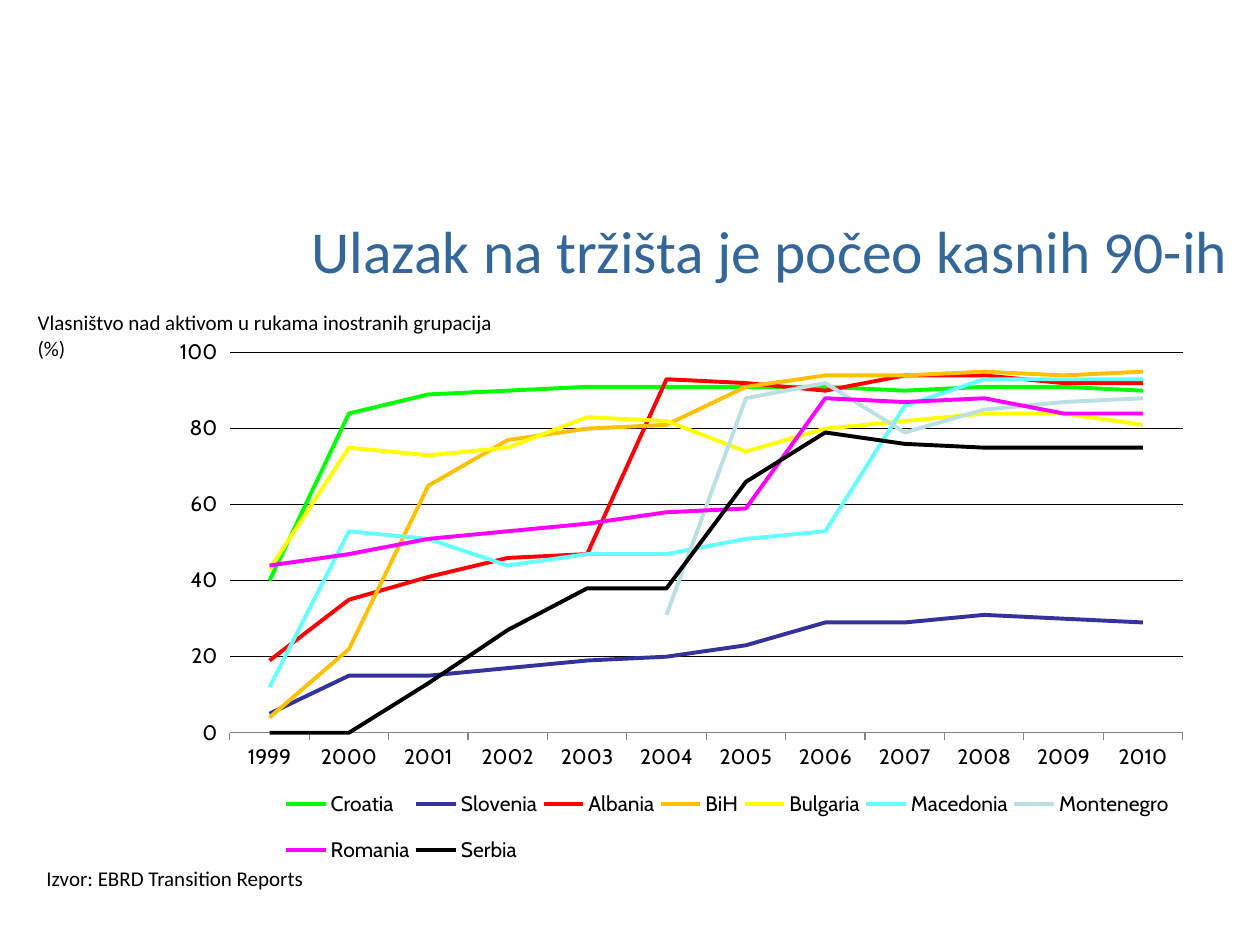
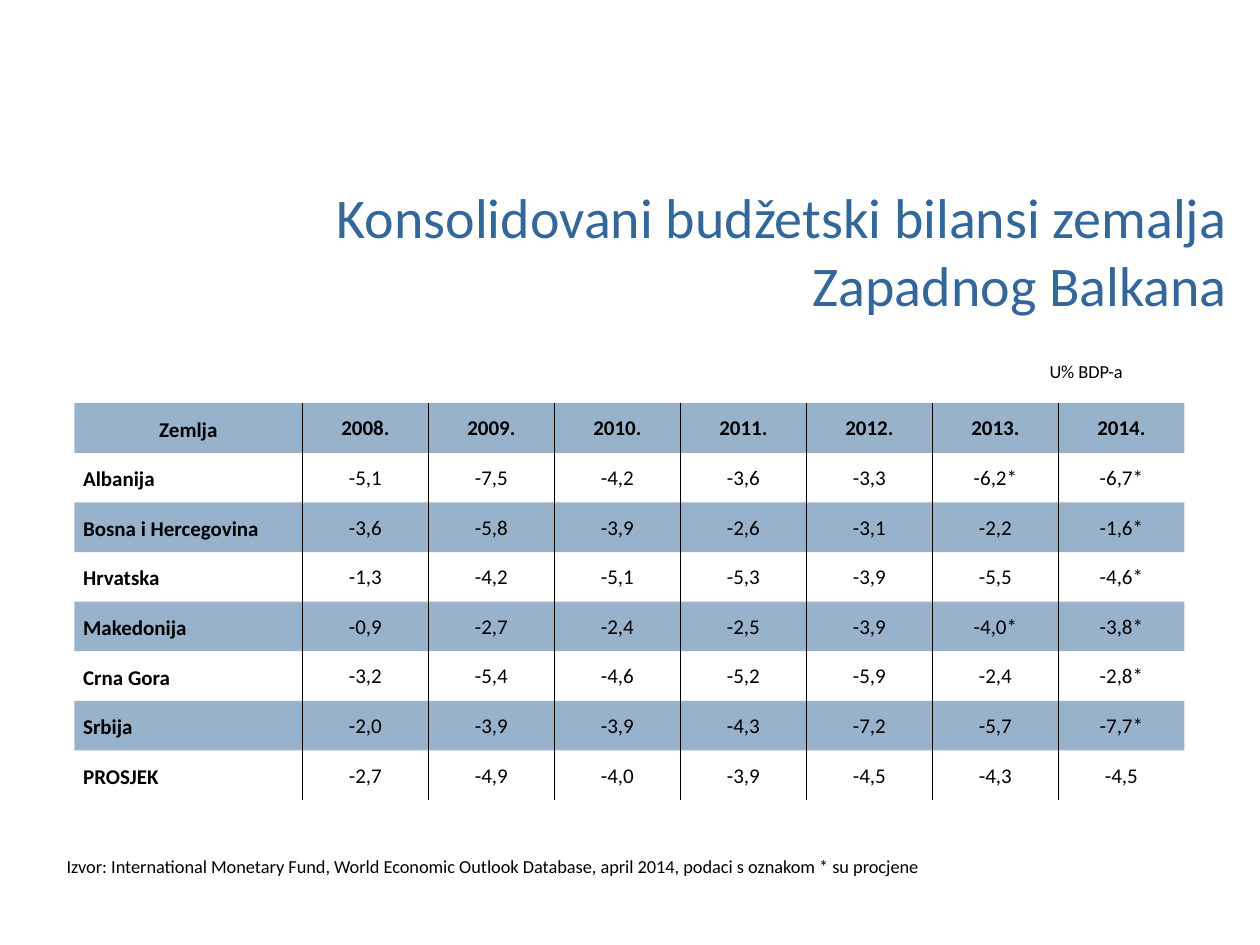
import pptx
import pptx.util
import pptx.chart.data
import pptx.dml.color
import pptx.enum.chart
import pptx.enum.text
import pptx.oxml
import pptx.oxml.ns

FONT, BLUE, BLACK = "Calibri", "336699", "000000"
INCH, PT = pptx.util.Inches, pptx.util.Pt
ALIGN = pptx.enum.text.PP_ALIGN
MIDDLE = pptx.enum.text.MSO_ANCHOR.MIDDLE
QN = pptx.oxml.ns.qn

YEARS = [str(year) for year in range(1999, 2011)]
LINES = [
    ("Croatia", "00FF00", [40, 84, 89, 90, 91, 91, 91, 91, 90, 91, 91, 90]),
    ("Slovenia", "333399", [5, 15, 15, 17, 19, 20, 23, 29, 29, 31, 30, 29]),
    ("Albania", "FF0000", [19, 35, 41, 46, 47, 93, 92, 90, 94, 94, 92, 92]),
    ("BiH", "FFC000", [4, 22, 65, 77, 80, 81, 91, 94, 94, 95, 94, 95]),
    ("Bulgaria", "FFFF00", [43, 75, 73, 75, 83, 82, 74, 80, 82, 84, 84, 81]),
    ("Macedonia", "66FFFF", [12, 53, 51, 44, 47, 47, 51, 53, 86, 93, 93, 93]),
    ("Montenegro", "BBE0E3", [None] * 5 + [31, 88, 92, 79, 85, 87, 88]),
    ("Romania", "FF00FF", [44, 47, 51, 53, 55, 58, 59, 88, 87, 88, 84, 84]),
    ("Serbia", "000000", [0, 0, 13, 27, 38, 38, 66, 79, 76, 75, 75, 75]),
]
ROWS = [
    ("Zemlja", "2008.", "2009.", "2010.", "2011.", "2012.", "2013.", "2014."),
    ("Albanija", "-5,1", "-7,5", "-4,2", "-3,6", "-3,3", "-6,2*", "-6,7*"),
    ("Bosna i Hercegovina", "-3,6", "-5,8", "-3,9", "-2,6", "-3,1", "-2,2", "-1,6*"),
    ("Hrvatska", "-1,3", "-4,2", "-5,1", "-5,3", "-3,9", "-5,5", "-4,6*"),
    ("Makedonija", "-0,9", "-2,7", "-2,4", "-2,5", "-3,9", "-4,0*", "-3,8*"),
    ("Crna Gora", "-3,2", "-5,4", "-4,6", "-5,2", "-5,9", "-2,4", "-2,8*"),
    ("Srbija", "-2,0", "-3,9", "-3,9", "-4,3", "-7,2", "-5,7", "-7,7*"),
    ("PROSJEK", "-2,7", "-4,9", "-4,0", "-3,9", "-4,5", "-4,3", "-4,5"),
]
CHART_BOX = (0.2, 2.57, 9.61, 4.49)
TABLE_BOX = (0.59, 3.2, 8.82, 3.15)
TITLE_BOX = (0.84, 1.63, 9, 0.71)
NO_STYLE = "{2D5ABB26-0587-4C30-8999-92F81FD0307C}"


def color(code):
    return pptx.dml.color.RGBColor.from_string(code)


def inches(box):
    return [INCH(side) for side in box]


def add_run(para, text, size, tint=BLACK, bold=False):
    run = para.add_run()
    run.text = text
    run.font.name, run.font.size, run.font.bold = FONT, PT(size), bold
    run.font.color.rgb = color(tint)


def add_text(slide, box, lines, size, tint=BLACK, align=ALIGN.LEFT, anchor=None):
    frame = slide.shapes.add_textbox(*inches(box)).text_frame
    frame.word_wrap = True
    if anchor is not None:
        frame.vertical_anchor = anchor
    for num, line in enumerate(lines):
        para = frame.add_paragraph() if num else frame.paragraphs[0]
        para.alignment = align
        add_run(para, line, size, tint)


def add_title(slide, text, size):
    add_text(slide, TITLE_BOX, [text], size, BLUE, ALIGN.RIGHT, MIDDLE)


def place(part, box, inner=False):
    for old in part.findall(QN("c:layout")):
        part.remove(old)
    target = '<c:layoutTarget val="inner"/>' if inner else ""
    modes = "".join(f'<c:{key}Mode val="edge"/>' for key in "xy")
    sides = "".join(f'<c:{key} val="{val}"/>' for key, val in zip("xywh", box))
    layout = pptx.oxml.parse_xml(
        f'<c:layout {pptx.oxml.ns.nsdecls("c")}><c:manualLayout>'
        f"{target}{modes}{sides}</c:manualLayout></c:layout>")
    part.insert(0 if inner else 1, layout)


def add_lines(slide):
    data = pptx.chart.data.CategoryChartData()
    data.categories = YEARS
    for name, _, vals in LINES:
        data.add_series(name, vals)
    kind = pptx.enum.chart.XL_CHART_TYPE.LINE
    chart = slide.shapes.add_chart(kind, *inches(CHART_BOX), data).chart
    chart.has_title = False
    chart.font.name, chart.font.size = "Cabin", PT(12)
    chart.font.color.rgb = color(BLACK)

    plot = chart.plots[0]
    plot.vary_by_categories = False
    for series, (_, tint, _) in zip(plot.series, LINES):
        series.smooth = False
        series.format.line.width = PT(2.25)
        series.format.line.color.rgb = color(tint)

    axis = chart.value_axis
    axis.minimum_scale, axis.maximum_scale, axis.major_unit = 0, 100, 20
    axis.format.line.fill.background()
    axis.major_gridlines.format.line.width = PT(0.75)
    axis.major_gridlines.format.line.color.rgb = color(BLACK)
    chart.category_axis.format.line.color.rgb = color("868686")

    chart.has_legend = True
    chart.legend.position = pptx.enum.chart.XL_LEGEND_POSITION.RIGHT
    chart.legend.include_in_layout = False
    area = chart.plots[0]._element.getparent()
    place(area, (0.169, 0.051, 0.787, 0.672), True)
    place(chart.legend._element, (0.21, 0.79, 0.74, 0.2))


def add_border(cell, side):
    line = pptx.oxml.parse_xml(
        f'<a:{side} {pptx.oxml.ns.nsdecls("a")} w="{PT(1)}"><a:solidFill>'
        f'<a:srgbClr val="{BLACK}"/></a:solidFill></a:{side}>')
    cell._tc.get_or_add_tcPr().insert(0, line)


def fill_cell(cell, text, row, col):
    first, head = col == 0, row == 0
    side = 0.07 if first else 0.01
    cell.margin_left = cell.margin_right = INCH(side)
    cell.margin_top, cell.margin_bottom = INCH(0 if first else 0.01), 0
    cell.vertical_anchor = MIDDLE
    para = cell.text_frame.paragraphs[0]
    para.alignment = ALIGN.LEFT if first and not head else ALIGN.CENTER
    if first:
        para.line_spacing = 1.15
    add_run(para, text, 12, bold=first or head)
    if row % 2:
        cell.fill.background()
    else:
        cell.fill.solid()
        cell.fill.fore_color.rgb = color(BLUE)
        tone = cell._tc.tcPr.find(".//" + QN("a:srgbClr"))
        tone.append(pptx.oxml.parse_xml(
            f'<a:alpha {pptx.oxml.ns.nsdecls("a")} val="50000"/>'))
    if col < len(ROWS[0]) - 1:
        add_border(cell, "lnR")
    if col:
        add_border(cell, "lnL")


def add_grid(slide):
    count = len(ROWS[0])
    table = slide.shapes.add_table(len(ROWS), count, *inches(TABLE_BOX)).table
    table.first_row = table.horz_banding = False
    table._tbl.tblPr.find(QN("a:tableStyleId")).text = NO_STYLE
    for col in range(count):
        table.columns[col].width = INCH(1 if col else 1.81)
    for row, texts in enumerate(ROWS):
        table.rows[row].height = INCH(TABLE_BOX[3] / len(ROWS))
        for col, text in enumerate(texts):
            fill_cell(table.cell(row, col), text, row, col)


def main():
    deck = pptx.Presentation()
    deck.slide_width, deck.slide_height = INCH(10), INCH(7.5)
    blank = deck.slide_layouts[6]

    slide = deck.slides.add_slide(blank)
    add_lines(slide)
    add_title(slide, "Ulazak na tržišta je počeo kasnih 90-ih", 34)
    add_text(slide, (0.27, 6.82, 3.93, 0.3), ["Izvor: EBRD Transition Reports"], 12)
    add_text(slide, (0.2, 2.41, 8.92, 0.51),
             ["Vlasništvo nad aktivom u rukama inostranih grupacija", "(%)"], 12)

    slide = deck.slides.add_slide(blank)
    add_grid(slide)
    add_title(slide, "Konsolidovani budžetski bilansi zemalja Zapadnog Balkana", 32)
    add_text(slide, (0.43, 6.74, 8.66, 0.28),
             ["Izvor: International Monetary Fund, World Economic Outlook Database, "
              "april 2014, podaci s oznakom * su procjene"], 10.5)
    add_text(slide, (0.35, 2.81, 8.66, 0.28), ["U% BDP-a"], 10.5, align=ALIGN.RIGHT)
    deck.save("out.pptx")


if __name__ == "__main__":
    main()
